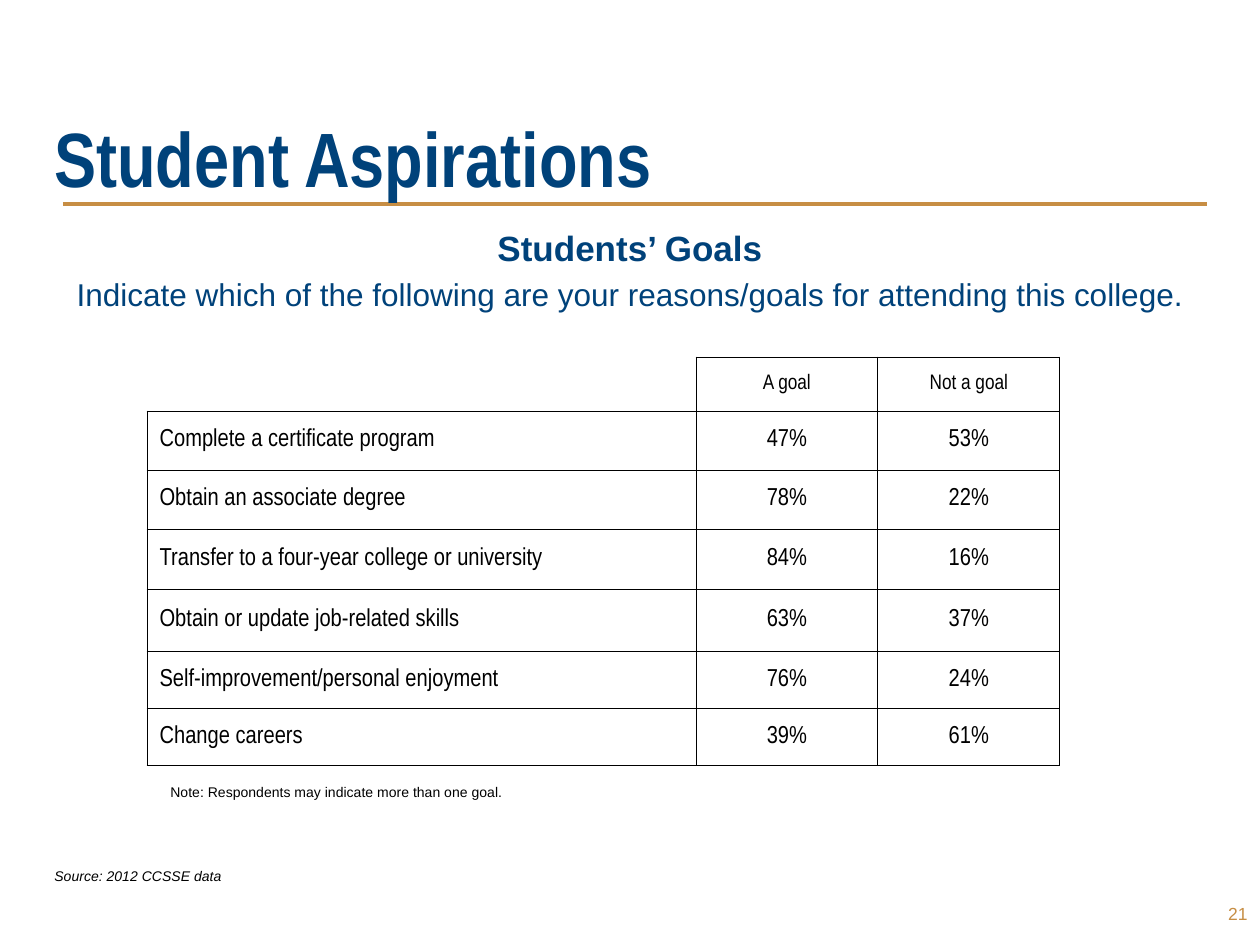
from lxml import etree
from pptx import Presentation
from pptx.dml.color import RGBColor
from pptx.enum import shapes, text
from pptx.oxml import ns
from pptx.util import Emu, Pt

PX = 914400 // 126
NAVY = RGBColor(0x00, 0x42, 0x7A)
GOLD = RGBColor(0xC7, 0x8E, 0x44)
BLACK = RGBColor(0, 0, 0)
WHITE = RGBColor(255, 255, 255)
LEFT, CENTER, RIGHT = text.PP_ALIGN.LEFT, text.PP_ALIGN.CENTER, text.PP_ALIGN.RIGHT
TOP, MIDDLE, BOTTOM = text.MSO_ANCHOR.TOP, text.MSO_ANCHOR.MIDDLE, text.MSO_ANCHOR.BOTTOM

RULE = (63, 204, 1207, 204)
TITLE = ("Student Aspirations", 44, NAVY, True, False)
HEADING = ("Students’ Goals", 20, NAVY, True, False)
QUESTION = ("Indicate which of the following are your reasons/goals for attending this college.",
            18, NAVY, False, False)
NOTE = ("Note: Respondents may indicate more than one goal.", 8, BLACK, False, False)
SOURCE = ("Source: 2012 CCSSE data", 8, BLACK, False, True)
NUMBER = ("21", 10, GOLD, False, False)
BOXES = [
    ((42, 67, 1176, 142), BOTTOM, LEFT, "Arial Narrow", [TITLE]),
    ((63, 220, 1134, 105), TOP, CENTER, "Arial", [HEADING, QUESTION]),
    ((1176, 892, 84, 44), MIDDLE, RIGHT, "Arial", [NUMBER]),
    ((158, 777, 766, 30), TOP, LEFT, "Arial", [NOTE]),
    ((42, 861, 252, 30), TOP, LEFT, "Arial", [SOURCE]),
]
GOALS = [
    ("", "A goal", "Not a goal"),
    ("Complete a certificate program", "47%", "53%"),
    ("Obtain an associate degree", "78%", "22%"),
    ("Transfer to a four-year college or university", "84%", "16%"),
    ("Obtain or update job-related skills", "63%", "37%"),
    ("Self-improvement/personal enjoyment", "76%", "24%"),
    ("Change careers", "39%", "61%"),
]
TABLE_LEFT, TABLE_TOP = 147, 357
COLUMNS = [549, 182, 182]
ROWS = [54, 59, 59, 60, 63, 57, 57]


def px(*lengths):
    return [Emu(length * PX) for length in lengths]


def style(paragraph, font_name, size, color, bold=False, italic=False):
    font = paragraph.font
    font.name, font.size, font.bold, font.italic = font_name, Pt(size), bold, italic
    font.color.rgb = color


def add_rule(page):
    rule = page.shapes.add_connector(shapes.MSO_CONNECTOR.STRAIGHT, *px(*RULE))
    rule.line.color.rgb = GOLD
    rule.line.width = Pt(2.25)
    etree.SubElement(rule._element.spPr, ns.qn("a:effectLst"))


def add_text(page, place, anchor, align, font_name, lines):
    frame = page.shapes.add_textbox(*px(*place)).text_frame
    frame.word_wrap = True
    frame.vertical_anchor = anchor
    for index, (words, *look) in enumerate(lines):
        paragraph = frame.add_paragraph() if index else frame.paragraphs[0]
        paragraph.text = words
        paragraph.alignment = align
        if index:
            paragraph.space_before = Pt(4)
        style(paragraph, font_name, *look)


def add_borders(cell, hidden):
    properties = cell._tc.get_or_add_tcPr()
    for side in ("lnL", "lnR", "lnT", "lnB"):
        line = etree.SubElement(properties, ns.qn(f"a:{side}"), w=str(Pt(0.5)))
        if side in hidden:
            etree.SubElement(line, ns.qn("a:noFill"))
        else:
            fill = etree.SubElement(line, ns.qn("a:solidFill"))
            etree.SubElement(fill, ns.qn("a:srgbClr"), val=str(BLACK))


def add_goals(page):
    place = px(TABLE_LEFT, TABLE_TOP, sum(COLUMNS), sum(ROWS))
    table = page.shapes.add_table(len(ROWS), len(COLUMNS), *place).table
    table.first_row = table.horz_banding = False
    for column, width in zip(table.columns, px(*COLUMNS)):
        column.width = width
    for row, height in zip(table.rows, px(*ROWS)):
        row.height = height
    for r, values in enumerate(GOALS):
        for c, value in enumerate(values):
            cell = table.cell(r, c)
            add_borders(cell, () if value else ("lnL", "lnT"))
            cell.fill.solid()
            cell.fill.fore_color.rgb = WHITE
            cell.vertical_anchor = MIDDLE
            paragraph = cell.text_frame.paragraphs[0]
            paragraph.text = value
            paragraph.alignment = CENTER if c else LEFT
            style(paragraph, "Arial Narrow", 14 if r else 12, BLACK)


def main():
    """Build the student aspirations slide."""
    deck = Presentation()
    deck.slide_width, deck.slide_height = px(1260, 945)
    page = deck.slides.add_slide(deck.slide_layouts[6])
    add_rule(page)
    for box in BOXES:
        add_text(page, *box)
    page.shapes[1].text_frame.paragraphs[0].line_spacing = Pt(44)
    add_goals(page)
    deck.save("out.pptx")


if __name__ == "__main__":
    main()
